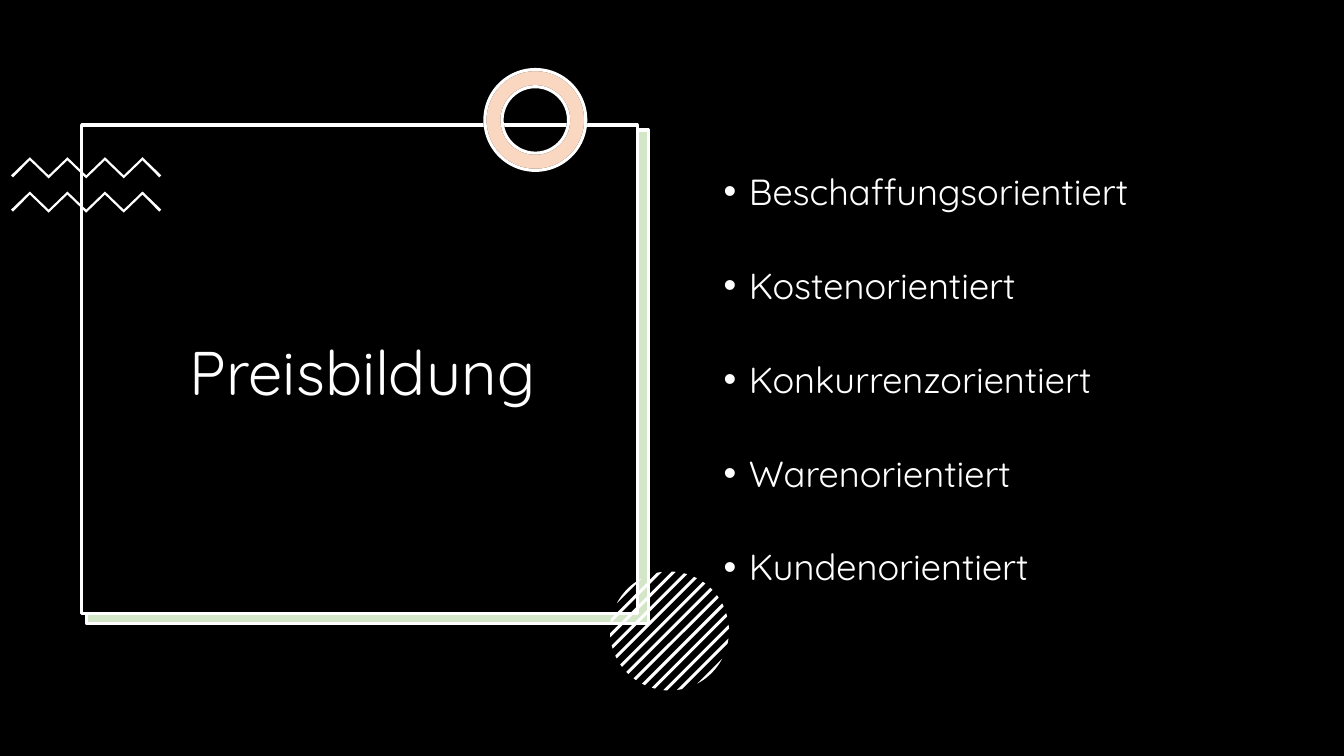
import math

from lxml import etree
from pptx import Presentation
from pptx import util as u
from pptx.dml.color import RGBColor
from pptx.enum import shapes, text
from pptx.oxml.ns import qn

PX = 9144  # 100 px to the inch
COLORS = {"black": "000000", "white": "FFFFFF", "green": "70AD47", "orange": "ED7D31"}
FONT = "Quicksand"


class Canvas:
    """Holds the style and the current slide."""

    def __init__(self, slide):
        self.slide = slide

    def paint(self, shape, fill, line=None, opacity=None):
        shape.shadow.inherit = False
        shape.fill.solid()
        shape.fill.fore_color.rgb = RGBColor.from_string(COLORS[fill])
        if opacity is not None:
            color = shape.fill._xPr.find(qn("a:solidFill"))[0]
            etree.SubElement(color, qn("a:alpha"), val=str(opacity * 1000))
        if line:
            shape.line.color.rgb = RGBColor.from_string(COLORS[line])
            shape.line.width = u.Pt(2.25)
        else:
            shape.line.fill.background()
        return shape

    def preset(self, kind, box, fill, **style):
        shape = self.slide.shapes.add_shape(kind, *(n * PX for n in box))
        return self.paint(shape, fill, **style)

    def rect(self, box, fill, **style):
        return self.preset(shapes.MSO_SHAPE.RECTANGLE, box, fill, **style)

    def ring(self, box, thickness, fill, **style):
        shape = self.preset(shapes.MSO_SHAPE.DONUT, box, fill, **style)
        shape.adjustments[0] = thickness / box[2]

    def polygon(self, points, fill):
        points = [(round(x * PX), round(y * PX)) for x, y in points]
        builder = self.slide.shapes.build_freeform(*points[0])
        builder.add_line_segments(points[1:], close=True)
        return self.paint(builder.convert_to_shape(), fill)

    def zigzag(self, left, top, width, fill):
        step = width / 8
        upper = [(left + i * step, top + (0 if i % 2 else 18)) for i in range(9)]
        lower = [(x, y + 3) for x, y in upper[1:-1]]
        ends = [(left + 2, top + 20), (left + width - 2, top + 20)]
        self.polygon(upper + [ends[1]] + lower[::-1] + [ends[0]], fill)

    def striped_circle(self, center_x, center_y, radius, stripes, fill):
        pitch = 2 * radius / (stripes - 1) * 0.98
        half = pitch * 0.155

        def angle(distance):
            return math.acos(max(-1, min(1, distance / radius)))

        def rim(turn):
            return (center_x + radius * math.cos(math.pi / 4 + turn),
                    center_y + radius * math.sin(math.pi / 4 + turn))

        for i in range(stripes):
            middle = (i - (stripes - 1) / 2) * pitch
            start, end = angle(middle - half), angle(middle + half)
            turns = [start + (end - start) * k / 6 for k in range(7)]
            self.polygon([rim(t) for t in turns] + [rim(-t) for t in turns[::-1]], fill)

    def text(self, box, lines, size, color="white", align=text.PP_ALIGN.LEFT,
             anchor=text.MSO_ANCHOR.TOP, spacing=1.0, before=0, bullet=None):
        frame = self.slide.shapes.add_textbox(*(n * PX for n in box)).text_frame
        frame.word_wrap = True
        frame.vertical_anchor = anchor
        for i, line in enumerate(lines):
            paragraph = frame.add_paragraph() if i else frame.paragraphs[0]
            paragraph.alignment = align
            paragraph.line_spacing = spacing
            paragraph.space_before = u.Pt(before)
            run = paragraph.add_run()
            run.text = line
            run.font.size = u.Pt(size)
            run.font.name = FONT
            run.font.color.rgb = RGBColor.from_string(COLORS[color])
            if bullet:
                properties = paragraph._p.get_or_add_pPr()
                properties.set("marL", str(25 * PX))
                properties.set("indent", str(-25 * PX))
                etree.SubElement(properties, qn("a:buFont"), typeface="Arial")
                etree.SubElement(properties, qn("a:buChar"), char=bullet)


def main():
    presentation = Presentation()
    presentation.slide_width, presentation.slide_height = 1333 * PX, 750 * PX
    canvas = Canvas(presentation.slides.add_slide(presentation.slide_layouts[6]))

    # Background and framed title card
    canvas.rect((0, 0, 1333, 750), "black")
    canvas.rect((85, 130, 557, 490), "white")
    canvas.rect((86, 129, 557, 490), "green", line="white", opacity=30)
    canvas.rect((81, 124, 551, 485), "black", line="white")

    # Decorations
    for top in (156, 190):
        canvas.zigzag(11, top, 149, "white")
    ring_box = (481, 69, 100, 100)
    canvas.ring(ring_box, 17, "white", line="black")
    canvas.ring(ring_box, 17, "orange", line="white", opacity=30)
    canvas.striped_circle(664, 626, 59, 13, "white")

    # Title and list
    canvas.text((92, 152, 536, 442), ["Preisbildung"], 44, spacing=0.9,
                align=text.PP_ALIGN.CENTER, anchor=text.MSO_ANCHOR.MIDDLE)
    kinds = ["Beschaffungs", "Kosten", "Konkurrenz", "Waren", "Kunden"]
    canvas.text((708, 124, 544, 476), [kind + "orientiert" for kind in kinds], 25.9,
                spacing=1.9, before=8, bullet="•")

    presentation.save("out.pptx")


if __name__ == "__main__":
    main()
